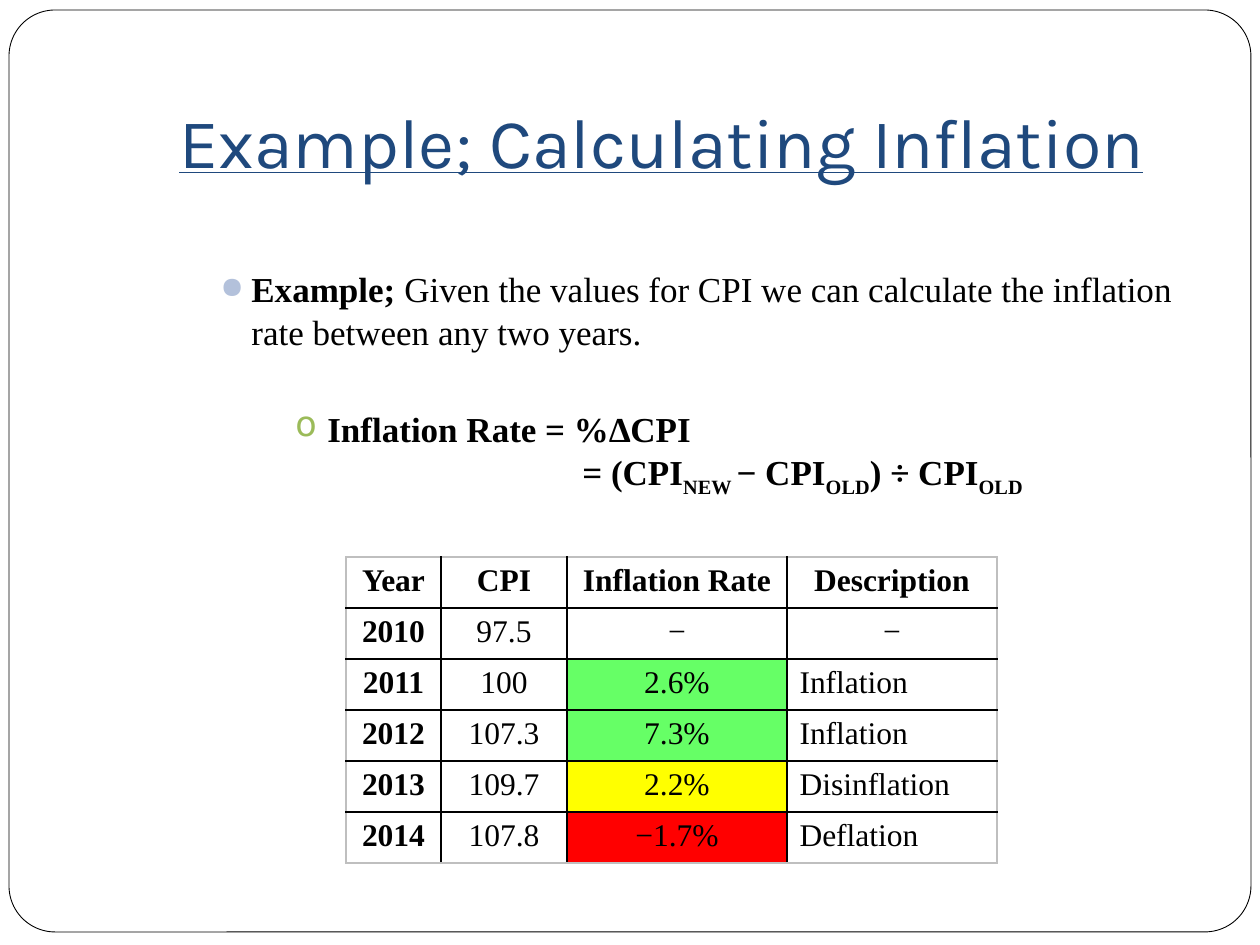
from pptx import Presentation
from pptx.dml.color import RGBColor
from pptx.enum.shapes import MSO_SHAPE as SHAPE
from pptx.enum.text import MSO_ANCHOR as ANCHOR, PP_ALIGN as ALIGN
from pptx.oxml.ns import qn
from pptx.util import Emu, Pt
from lxml.etree import SubElement

WHITE = RGBColor(0xFF, 0xFF, 0xFF)
BLACK = RGBColor(0, 0, 0)
NAVY = RGBColor(0x1F, 0x49, 0x7D)
PALE_BLUE = RGBColor(0xB3, 0xC1, 0xDB)
OLIVE = RGBColor(0x9B, 0xBB, 0x59)
GREY = RGBColor(0xBF, 0xBF, 0xBF)
GREEN = RGBColor(0x66, 0xFF, 0x66)
YELLOW = RGBColor(0xFF, 0xFF, 0)
RED = RGBColor(0xFF, 0, 0)


def px(n):
    return Emu(round(n * 914400 / 126))


def add_run(p, text, font="Times New Roman", size=20, color=BLACK,
            bold=False, underline=False, baseline=0):
    r = p.add_run()
    r.text = text
    f = r.font
    f.name, f.size, f.bold, f.underline = font, Pt(size), bold, underline
    f.color.rgb = color
    if baseline:
        r._r.get_or_add_rPr().set("baseline", str(baseline * 1000))


def set_indent(p, left, hanging=0, bullet=None, color=None, percent=100):
    pPr = p._p.get_or_add_pPr()
    pPr.set("marL", str(px(left)))
    pPr.set("indent", str(-px(hanging)))
    if bullet:
        clr = SubElement(pPr, qn("a:buClr"))
        SubElement(clr, qn("a:srgbClr"), val=str(color))
        SubElement(pPr, qn("a:buSzPct"), val=str(percent * 1000))
        SubElement(pPr, qn("a:buChar"), char=bullet)


def set_border(cell, sides):
    tcPr = cell._tc.get_or_add_tcPr()
    for i, (side, color) in enumerate(sides.items()):
        ln = tcPr.makeelement(qn(f"a:ln{side}"), {"w": str(Pt(1))})
        fill = SubElement(ln, qn("a:solidFill"))
        SubElement(fill, qn("a:srgbClr"), val=str(color))
        tcPr.insert(i, ln)


class SlideBuilder:
    def __init__(self, slide):
        self.s = slide

    def frame(self, x, y, w, h):
        sp = self.s.shapes.add_shape(SHAPE.ROUNDED_RECTANGLE, px(x), px(y), px(w), px(h))
        sp.adjustments[0] = 0.05
        sp.shadow.inherit = False
        sp.fill.solid()
        sp.fill.fore_color.rgb = WHITE
        sp.line.color.rgb = BLACK
        sp.line.width = Pt(0.5)

    def text_box(self, x, y, w, h, anchor=ANCHOR.TOP, top=0, bottom=0):
        tf = self.s.shapes.add_textbox(px(x), px(y), px(w), px(h)).text_frame
        tf.word_wrap = True
        tf.vertical_anchor = anchor
        tf.margin_top, tf.margin_bottom = px(top), px(bottom)
        return tf

    def title(self, text, x, y, w, h):
        p = self.text_box(x, y, w, h, ANCHOR.BOTTOM, 6, 13).paragraphs[0]
        p.alignment = ALIGN.CENTER
        add_run(p, text, font="Karla", size=40, color=NAVY, underline=True)

    def body(self, paragraphs, x, y, w, h):
        tf = self.text_box(x, y, w, h)
        for i, (before, indent, runs) in enumerate(paragraphs):
            p = tf.add_paragraph() if i else tf.paragraphs[0]
            p.line_spacing = Pt(24)
            p.space_before = Pt(before)
            set_indent(p, **indent)
            for text, fmt in runs:
                add_run(p, text, **fmt)

    def table(self, rows, fills, x, y, widths, row_h):
        n, m = len(rows), len(widths)
        t = self.s.shapes.add_table(n, m, px(x), px(y), px(sum(widths)), px(row_h * n)).table
        t.first_row = t.horz_banding = False
        for col, w in zip(t.columns, widths):
            col.width = px(w)
        for i, row in enumerate(rows):
            t.rows[i].height = px(row_h)
            for j, text in enumerate(row):
                cell = t.cell(i, j)
                cell.fill.solid()
                cell.fill.fore_color.rgb = fills.get((i, j), WHITE)
                p = cell.text_frame.paragraphs[0]
                p.alignment = ALIGN.LEFT if j == 3 and i > 1 else ALIGN.CENTER
                add_run(p, text, size=18, bold=i == 0 or j == 0)
                outer = {"L": j == 0, "R": j == m - 1, "T": i == 0, "B": i == n - 1}
                set_border(cell, {k: GREY if v else BLACK for k, v in outer.items()})


def main():
    prs = Presentation()
    prs.slide_width, prs.slide_height = px(1260), px(945)
    b = SlideBuilder(prs.slides.add_slide(prs.slide_layouts[6]))
    b.frame(9, 10, 1242, 922)
    b.title("Example; Calculating Inflation", 126, 38, 1071, 157)

    bold = {"bold": True}
    sub = {"bold": True, "baseline": -25}
    b.body([
        (0, dict(left=113, hanging=31, bullet="●", color=PALE_BLUE, percent=85),
         [("Example; ", bold),
          ("Given the values for CPI we can calculate the inflation rate "
           "between any two years.", {})]),
        (31.5, dict(left=189, hanging=32, bullet="o", color=OLIVE),
         [("Inflation Rate = %∆CPI", bold)]),
        (4, dict(left=444),
         [("= (CPI", bold), ("NEW ", sub), ("− CPI", bold), ("OLD", sub),
          (") ÷ CPI", bold), ("OLD", sub)]),
    ], 126, 268, 1071, 250)

    rows = [
        ("Year", "CPI", "Inflation Rate", "Description"),
        ("2010", "97.5", "−", "−"),
        ("2011", "100", "2.6%", "Inflation"),
        ("2012", "107.3", "7.3%", "Inflation"),
        ("2013", "109.7", "2.2%", "Disinflation"),
        ("2014", "107.8", "−1.7%", "Deflation"),
    ]
    fills = {(2, 2): GREEN, (3, 2): GREEN, (4, 2): YELLOW, (5, 2): RED}
    b.table(rows, fills, 346, 557, [95, 126, 220, 210], 51)
    prs.save("out.pptx")


if __name__ == "__main__":
    main()
